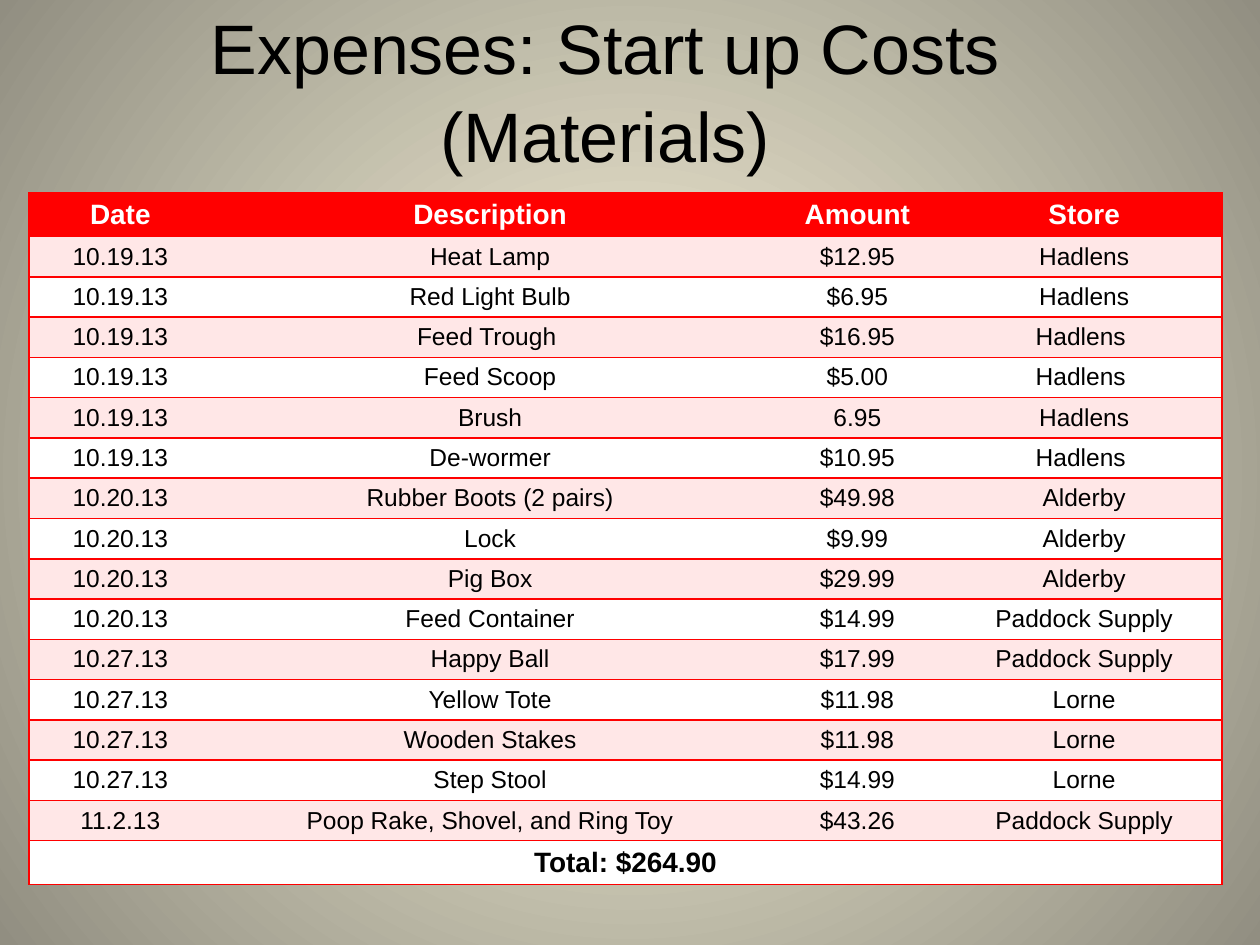
from pptx import Presentation
from pptx.dml.color import RGBColor
from pptx.enum import text
from pptx.oxml import parse_xml
from pptx.oxml import ns
from pptx.util import Inches, Pt

COLORS = {
    "red": "FF0000",
    "pink": "FFE7E7",
    "white": "FFFFFF",
    "black": "000000",
    "center": "FCF7DD",
    "edge": "918E81",
}
FONT = "Arial"
PLAIN_TABLE = "{2D5ABB26-0587-4C30-8999-92F81FD0307C}"
HEADINGS = ("Date", "Description", "Amount", "Store")
EXPENSES = [
    ("10.19.13", "Heat Lamp", "$12.95", "Hadlens"),
    ("10.19.13", "Red Light Bulb", "$6.95", "Hadlens"),
    ("10.19.13", "Feed Trough ", "$16.95", "Hadlens "),
    ("10.19.13", "Feed Scoop", "$5.00", "Hadlens "),
    ("10.19.13", "Brush", "6.95", "Hadlens"),
    ("10.19.13", "De-wormer", "$10.95", "Hadlens "),
    ("10.20.13", "Rubber Boots (2 pairs)", "$49.98", "Alderby"),
    ("10.20.13", "Lock", "$9.99", "Alderby"),
    ("10.20.13", "Pig Box", "$29.99", "Alderby"),
    ("10.20.13", "Feed Container", "$14.99", "Paddock Supply"),
    ("10.27.13", "Happy Ball", "$17.99", "Paddock Supply"),
    ("10.27.13", "Yellow Tote", "$11.98", "Lorne"),
    ("10.27.13", "Wooden Stakes", "$11.98", "Lorne"),
    ("10.27.13", "Step Stool", "$14.99", "Lorne"),
    ("11.2.13", "Poop Rake, Shovel, and Ring Toy", "$43.26", "Paddock Supply"),
]
TOTAL = "Total: $264.90"
COLUMN_WIDTHS = (1.45, 4.42, 1.41, 2.19)
ROW_HEIGHT = 0.32


def rgb(name):
    return RGBColor.from_string(COLORS[name])


def add_span(para, words, size, color, bold=False):
    span = para.add_run()
    span.text = words
    span.font.name = FONT
    span.font.size = Pt(size)
    span.font.bold = bold
    span.font.color.rgb = rgb(color)


def paint_background(page):
    fill = page.background.fill
    fill.gradient()
    for stop, name, position in zip(fill.gradient_stops, ("center", "edge"), (0, 1)):
        stop.color.rgb = rgb(name)
        stop.position = position
    gradient = page.element.find(".//" + ns.qn("a:gradFill"))
    gradient.replace(
        gradient.find(ns.qn("a:lin")),
        parse_xml(
            f'<a:path {ns.nsdecls("a")} path="circle">'
            '<a:fillToRect l="50000" t="50000" r="50000" b="50000"/></a:path>'
        ),
    )


def fill_title(page):
    box = page.shapes.title
    box.left, box.top = Inches(-0.2), Inches(0.08)
    box.width, box.height = Inches(10.16), Inches(1.25)
    frame = box.text_frame
    frame.word_wrap = True
    frame.auto_size = text.MSO_AUTO_SIZE.NONE
    frame.vertical_anchor = text.MSO_ANCHOR.MIDDLE
    para = frame.paragraphs[0]
    para.alignment = text.PP_ALIGN.CENTER
    para.line_spacing = 1.04
    add_span(para, "Expenses: Start up Costs ", 40, "black")
    para.add_line_break()
    add_span(para, "(Materials) ", 40, "black")


def add_borders(cell, sides):
    properties = cell._tc.get_or_add_tcPr()
    for index, side in enumerate(sides):
        properties.insert(index, parse_xml(
            f'<a:ln{side} {ns.nsdecls("a")} w="12700"><a:solidFill>'
            f'<a:srgbClr val="{COLORS["red"]}"/></a:solidFill></a:ln{side}>'
        ))


def fill_cell(cell, words, fill, size=14, color="black", bold=False):
    cell.fill.solid()
    cell.fill.fore_color.rgb = rgb(fill)
    para = cell.text_frame.paragraphs[0]
    para.alignment = text.PP_ALIGN.CENTER
    add_span(para, words, size, color, bold)


def add_expense_table(page):
    row_count, column_count = len(EXPENSES) + 2, len(HEADINGS)
    frame = page.shapes.add_table(
        row_count, column_count, Inches(0.23), Inches(1.53),
        Inches(sum(COLUMN_WIDTHS)), Inches(ROW_HEIGHT * row_count),
    )
    table = frame.table
    table.first_row = table.horz_banding = False
    table._tbl.tblPr.find(ns.qn("a:tableStyleId")).text = PLAIN_TABLE
    for column, width in zip(table.columns, COLUMN_WIDTHS):
        column.width = Inches(width)
    for row in table.rows:
        row.height = Inches(ROW_HEIGHT)

    for column, heading in enumerate(HEADINGS):
        fill_cell(table.cell(0, column), heading, "red", 16, "white", True)
    for row, expense in enumerate(EXPENSES, start=1):
        for column, words in enumerate(expense):
            fill_cell(table.cell(row, column), words, "pink" if row % 2 else "white")
    total = table.cell(row_count - 1, 0)
    total.merge(table.cell(row_count - 1, column_count - 1))
    fill_cell(total, TOTAL, "white", 16, bold=True)

    for row in range(row_count):
        for column in range(column_count):
            left = "L" if column == 0 else ""
            right = "R" if column == column_count - 1 or row == row_count - 1 else ""
            add_borders(table.cell(row, column), left + right + "TB")


def main():
    deck = Presentation()
    deck.slide_width, deck.slide_height = Inches(10), Inches(7.5)
    page = deck.slides.add_slide(deck.slide_layouts[5])
    paint_background(page)
    fill_title(page)
    add_expense_table(page)
    deck.save("out.pptx")


if __name__ == "__main__":
    main()
